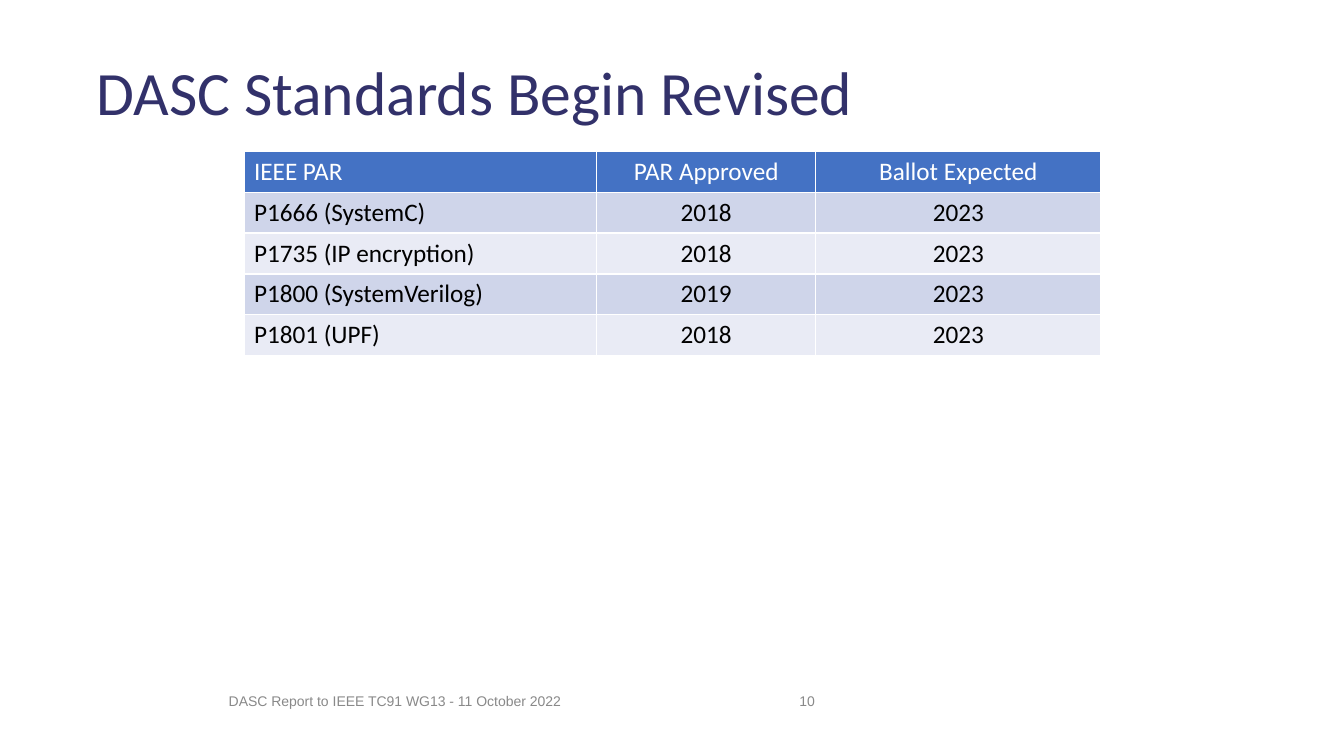
"""Build the slide listing the DASC standards under revision."""
from typing import NamedTuple

from pptx import Presentation
from pptx.dml.color import RGBColor
from pptx.enum.text import MSO_ANCHOR as Anchor, PP_ALIGN as Align
from pptx.util import Inches, Pt


class Label(NamedTuple):
    text: str
    left: float
    top: float
    width: float
    height: float
    size: int
    font: str
    color: str
    line_spacing: float = 1.0


class Standard(NamedTuple):
    par: str
    approved: str
    ballot: str


LABELS = [
    Label("DASC Standards Begin Revised", 0.86, 0.22, 11.5, 1.45, 44, "Calibri", "32316A", 0.9),
    Label("10", 7.83, 6.75, 0.75, 0.4, 10, "Arial", "898989"),
    Label("DASC Report to IEEE TC91 WG13 - 11 October 2022",
          2.17, 6.75, 5.42, 0.4, 10, "Arial", "898989"),
]
HEADER = Standard("IEEE PAR", "PAR Approved", "Ballot Expected")
STANDARDS = [
    Standard("P1666 (SystemC)", "2018", "2023"),
    Standard("P1735 (IP encryption)", "2018", "2023"),
    Standard("P1800 (SystemVerilog)", "2019", "2023"),
    Standard("P1801 (UPF)", "2018", "2023"),
]
COLUMN_WIDTHS = [3.5, 2.17, 2.83]
ROW_HEIGHT = 0.406
HEADER_FILL = "4472C4"
BAND_FILLS = ["CFD5EA", "E9EBF5"]


def rgb(value: str) -> RGBColor:
    return RGBColor.from_string(value)


def style_text(para, size: int, font: str, color: str) -> None:
    for span in para.runs:
        span.font.size = Pt(size)
        span.font.name = font
        span.font.bold = False
        span.font.color.rgb = rgb(color)


def add_label(page, label: Label) -> None:
    box = page.shapes.add_textbox(Inches(label.left), Inches(label.top),
                                  Inches(label.width), Inches(label.height))
    frame = box.text_frame
    frame.text = label.text
    frame.word_wrap = True
    frame.vertical_anchor = Anchor.MIDDLE
    para = frame.paragraphs[0]
    para.line_spacing = label.line_spacing
    style_text(para, label.size, label.font, label.color)


def add_standards_table(page) -> None:
    rows = [HEADER, *STANDARDS]
    table = page.shapes.add_table(
        len(rows), len(COLUMN_WIDTHS), Inches(2.42), Inches(1.5),
        Inches(sum(COLUMN_WIDTHS)), Inches(ROW_HEIGHT * len(rows))).table
    for column, width in zip(table.columns, COLUMN_WIDTHS):
        column.width = Inches(width)
    for row_index, standard in enumerate(rows):
        is_header = row_index == 0
        fill = HEADER_FILL if is_header else BAND_FILLS[(row_index - 1) % 2]
        for column_index, text in enumerate(standard):
            cell = table.cell(row_index, column_index)
            cell.fill.solid()
            cell.fill.fore_color.rgb = rgb(fill)
            cell.vertical_anchor = Anchor.BOTTOM if is_header else Anchor.TOP
            cell.text_frame.text = text
            para = cell.text_frame.paragraphs[0]
            para.alignment = Align.CENTER if column_index else Align.LEFT
            style_text(para, 18, "Calibri", "FFFFFF" if is_header else "000000")


def main() -> None:
    deck = Presentation()
    deck.slide_width, deck.slide_height = Inches(13.33), Inches(7.5)
    page = deck.slides.add_slide(deck.slide_layouts[6])
    for label in LABELS:
        add_label(page, label)
    add_standards_table(page)
    deck.save("out.pptx")


if __name__ == "__main__":
    main()
